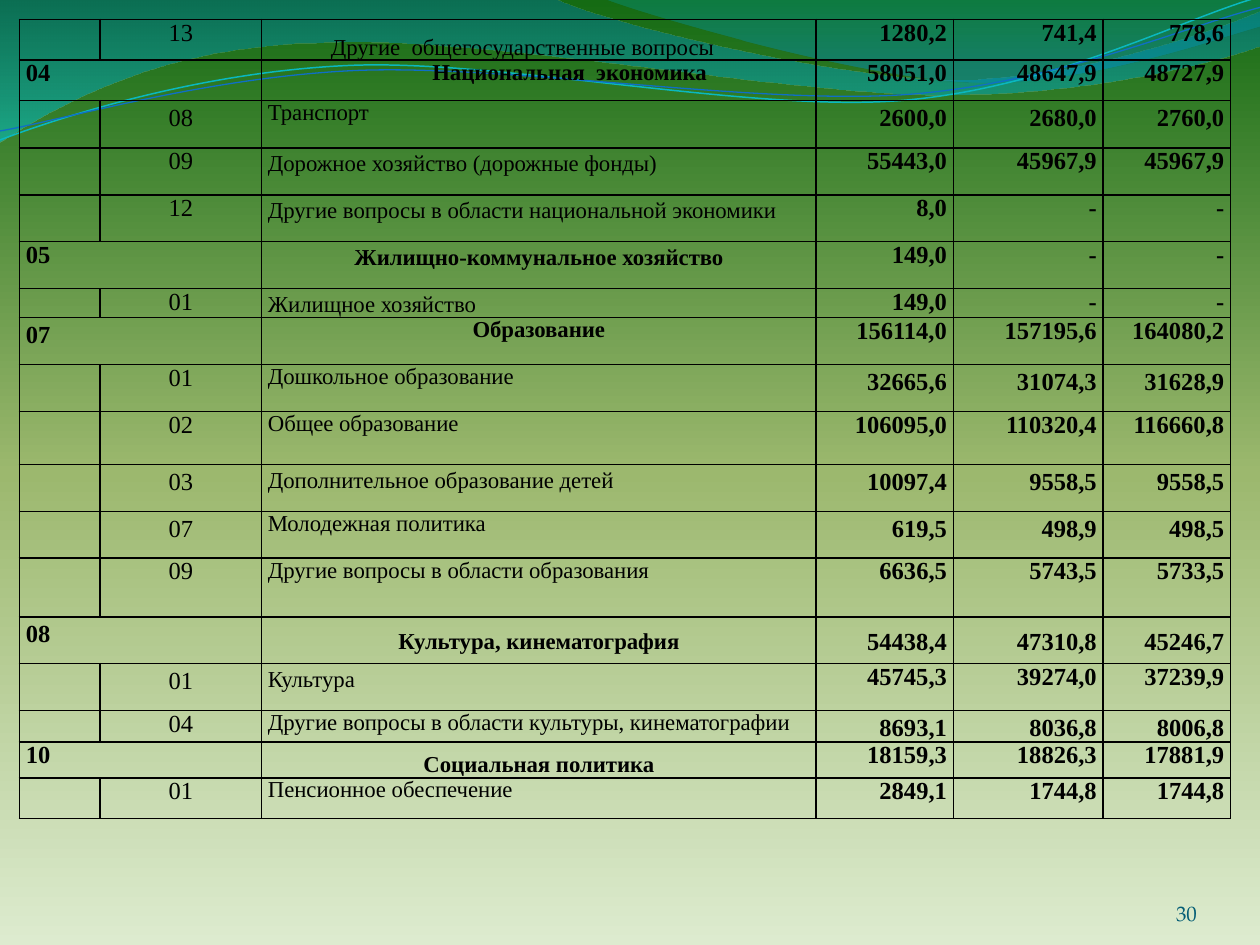
import dataclasses
import math
import lxml.etree
import pptx
import pptx.dml.color
import pptx.enum.text
import pptx.oxml
import pptx.oxml.ns
import pptx.util

Cm = pptx.util.Cm
Pt = pptx.util.Pt
qn = pptx.oxml.ns.qn
ALIGN = pptx.enum.text.PP_ALIGN
ANCHOR = pptx.enum.text.MSO_ANCHOR


@dataclasses.dataclass(frozen=True)
class Theme:
    ink: str = "000000"
    number: str = "045D75"
    backdrop: tuple = ((0, "DDEBCF", 100), (50, "9CB86E", 100), (100, "156B13", 100))
    wide_wave: tuple = ((0, "0074A1", 45), (100, "00C6CF", 55))
    right_wave: tuple = ((0, "00A1A9", 30), (80, "008BBF", 45))
    upper_line: str = "0AB8BF"
    lower_line: str = "0F6FC6"
    body_font: str = "Times New Roman"
    number_font: str = "TeX Gyre Pagella"
    figure_size: int = 14
    name_size: int = 13
    number_size: int = 12


THEME = Theme()

WIDE_WAVE = [
    (0, -0.03), (11.18, -0.03), (12.09, 0.43, 16.87, 1.6, 19.25, 1.6),
    (21.67, 1.6, 24.33, 0.66, 25.4, 0.23), (25.43, 0.91),
    (24.97, 1.12, 22.1, 1.93, 18.95, 1.91), (15.8, 1.91, 9.7, 0.71, 6.53, 0.86),
    (3.28, 0.89, 1.17, 2.11, -0.03, 2.87)]
RIGHT_WAVE = [
    (12.17, -0.03), (12.93, 0.28, 17.32, 1.57, 19.53, 1.65),
    (21.74, 1.75, 24.41, 0.81, 25.4, 0.53), (25.4, 0)]
UPPER_LINE = [
    (0, 2.82), (1.22, 2.36, 4.01, 1.45, 7.04, 1.32),
    (10.03, 1.19, 15.06, 2.26, 18.11, 2.03), (21.16, 1.8, 23.83, 0.38, 25.35, -0.05)]
LOWER_LINE = [
    (0, 2.64), (1.19, 2.44, 4.17, 1.55, 7.19, 1.42),
    (10.24, 1.3, 15.16, 2.11, 18.21, 1.91), (21.23, 1.7, 23.9, 0.53, 25.4, 0.15)]
LINE_CENTER = (12.68, 1.46)
LINE_TILT = -2.7

COLUMN_WIDTHS = [1.63, 3.25, 11.18, 2.77, 3.02, 2.57]
# Height, section, code, name, figures, loosely spaced parts: c code, n name, v figures
BUDGET = [
    (0.82, "", "13", "Другие  общегосударственные вопросы", "1280,2 741,4 778,6", ""),
    (0.82, "04", "", "Национальная  экономика", "58051,0 48647,9 48727,9", ""),
    (0.95, "", "08", "Транспорт", "2600,0 2680,0 2760,0", "cv"),
    (0.95, "", "09", "Дорожное хозяйство (дорожные фонды)", "55443,0 45967,9 45967,9", "n"),
    (0.94, "", "12", "Другие вопросы в области национальной экономики", "8,0 - -", "n"),
    (0.95, "05", "", "Жилищно-коммунальное хозяйство", "149,0 - -", "n"),
    (0.58, "", "01", "Жилищное хозяйство", "149,0 - -", "n"),
    (0.95, "07", "", "Образование", "156114,0 157195,6 164080,2", "c"),
    (0.95, "", "01", "Дошкольное образование", "32665,6 31074,3 31628,9", "v"),
    (1.06, "", "02", "Общее образование", "106095,0 110320,4 116660,8", ""),
    (0.95, "", "03", "Дополнительное образование детей", "10097,4 9558,5 9558,5", "cnv"),
    (0.94, "", "07", "Молодежная политика", "619,5 498,9 498,5", "cv"),
    (1.19, "", "09", "Другие вопросы в области образования", "6636,5 5743,5 5733,5", ""),
    (0.94, "08", "", "Культура, кинематография", "54438,4 47310,8 45246,7", "cv"),
    (0.94, "", "01", "Культура", "45745,3 39274,0 37239,9", "cn"),
    (0.64, "", "04", "Другие вопросы в области культуры, кинематографии",
     "8693,1 8036,8 8006,8", "v"),
    (0.72, "10", "", "Социальная политика", "18159,3 18826,3 17881,9", ""),
    (0.82, "", "01", "Пенсионное обеспечение", "2849,1 1744,8 1744,8", ""),
]


def color(value):
    return pptx.dml.color.RGBColor.from_string(value)


def set_gradient(fill, properties, stops, angle):
    fill.gradient()
    gradient = properties.find(qn("a:gradFill"))
    stop_list = gradient.find(qn("a:gsLst"))
    for old_stop in list(stop_list):
        stop_list.remove(old_stop)
    for position, value, opacity in stops:
        stop = lxml.etree.SubElement(stop_list, qn("a:gs"), pos=str(position * 1000))
        tone = lxml.etree.SubElement(stop, qn("a:srgbClr"), val=value)
        if opacity < 100:
            lxml.etree.SubElement(tone, qn("a:alpha"), val=str(opacity * 1000))
    gradient.find(qn("a:lin")).set("ang", str(angle * 60000))


def turn(point, angle):
    sine, cosine = math.sin(math.radians(angle)), math.cos(math.radians(angle))
    x, y = (value - middle for value, middle in zip(point, LINE_CENTER))
    return (LINE_CENTER[0] + x * cosine - y * sine,
            LINE_CENTER[1] + x * sine + y * cosine)


def add_outline(page, box, segments, close, tilt=0):
    left, top = box
    routes = []
    for segment in segments:
        pairs = [turn(pair, -tilt) for pair in zip(segment[::2], segment[1::2])]
        routes.append([(Cm(left + x), Cm(top + y)) for x, y in pairs])
    builder = page.shapes.build_freeform(*routes[0][-1], scale=1.0)
    builder.add_line_segments([route[-1] for route in routes[1:]], close=close)
    shape = builder.convert_to_shape()
    for route, line in zip(routes[1:], list(shape._element.iter(qn("a:lnTo")))):
        if len(route) == 3:
            curve = lxml.etree.Element(qn("a:cubicBezTo"))
            for x, y in route:
                lxml.etree.SubElement(curve, qn("a:pt"), x=str(x - shape.left),
                                      y=str(y - shape.top))
            line.getparent().replace(line, curve)
    shape.rotation = tilt
    shape.shadow.inherit = False
    return shape


def add_waves(page, box):
    for segments, stops in ((WIDE_WAVE, THEME.wide_wave), (RIGHT_WAVE, THEME.right_wave)):
        wave = add_outline(page, box, segments, True)
        set_gradient(wave.fill, wave._element.spPr, stops, 90)
        wave.line.fill.background()
    for segments, tone, width in ((UPPER_LINE, THEME.upper_line, 0.85),
                                  (LOWER_LINE, THEME.lower_line, 0.75)):
        curve = add_outline(page, box, segments, False, LINE_TILT)
        curve.fill.background()
        curve.line.color.rgb = color(tone)
        curve.line.width = Pt(width)


def format_cell(cell):
    cell.margin_left = cell.margin_right = Cm(0.13)
    cell.margin_top = cell.margin_bottom = 0
    cell.fill.background()
    properties = cell._tc.get_or_add_tcPr()
    for index, side in enumerate(("lnL", "lnR", "lnT", "lnB")):
        border = pptx.oxml.parse_xml(
            f'<a:{side} {pptx.oxml.ns.nsdecls("a")} w="12700"><a:solidFill>'
            f'<a:srgbClr val="{THEME.ink}"/></a:solidFill></a:{side}>')
        properties.insert(index, border)
    end = cell.text_frame.paragraphs[0]._p.get_or_add_endParaRPr()
    end.set("sz", str(THEME.name_size * 100))


def write(frame, text, size, alignment, bold=False, loose=False,
          font=THEME.body_font, tone=THEME.ink):
    frame.text = text
    para = frame.paragraphs[0]
    para.alignment = alignment
    if loose:
        para.line_spacing = 1.15
        para.space_after = Pt(10)
    for span in para.runs:
        span.font.size = Pt(size)
        span.font.bold = bold
        span.font.name = font
        span.font.color.rgb = color(tone)
    return para


def set_indent(para, margin, first_line):
    properties = para._p.get_or_add_pPr()
    properties.set("marL", str(Cm(margin)))
    properties.set("indent", str(Cm(first_line)))


def add_budget_table(page, box):
    table = page.shapes.add_table(len(BUDGET), len(COLUMN_WIDTHS), *map(Cm, box)).table
    table.first_row = table.horz_banding = False
    for column, width in zip(table.columns, COLUMN_WIDTHS):
        column.width = Cm(width)
    names = {}
    for row, (height, section, code, name, figures, loose) in enumerate(BUDGET):
        table.rows[row].height = Cm(height)
        cells = [table.cell(row, column) for column in range(len(COLUMN_WIDTHS))]
        for cell in cells:
            format_cell(cell)
        heading = bool(section)
        if heading:
            cells[0].merge(cells[1])
            write(cells[0].text_frame, section, THEME.figure_size, ALIGN.LEFT,
                  True, "c" in loose)
        else:
            write(cells[1].text_frame, code, THEME.figure_size, ALIGN.CENTER,
                  False, "c" in loose)
        names[name] = cells[2], write(
            cells[2].text_frame, name, THEME.name_size,
            ALIGN.CENTER if heading else ALIGN.JUSTIFY, heading, "n" in loose)
        for cell, figure in zip(cells[3:], figures.split()):
            write(cell.text_frame, figure, THEME.figure_size, ALIGN.RIGHT, True, "v" in loose)
            if section == "08":
                cell.vertical_anchor = ANCHOR.MIDDLE

    cell, para = names["Другие  общегосударственные вопросы"]
    cell.vertical_anchor = ANCHOR.BOTTOM
    para.alignment = ALIGN.LEFT
    set_indent(para, 1.57, -0.3)
    set_indent(names["Национальная  экономика"][1], 0, 1.24)
    names["Социальная политика"][0].vertical_anchor = ANCHOR.BOTTOM
    para = names["Культура, кинематография"][1]
    para.line_spacing = 1.5
    para.space_before = Pt(6)


def add_page_number(page, box):
    frame = page.shapes.add_textbox(*map(Cm, box)).text_frame
    frame.word_wrap = True
    frame.vertical_anchor = ANCHOR.BOTTOM
    frame.margin_left = frame.margin_right = frame.margin_top = frame.margin_bottom = 0
    write(frame, "30", THEME.number_size, ALIGN.RIGHT,
          font=THEME.number_font, tone=THEME.number)


def main():
    deck = pptx.Presentation()
    deck.slide_width, deck.slide_height = Cm(25.4), Cm(19.05)
    page = deck.slides.add_slide(deck.slide_layouts[6])
    fill = page.background.fill
    set_gradient(fill, page._element.cSld.find(qn("p:bg")).find(qn("p:bgPr")),
                 THEME.backdrop, 270)
    add_waves(page, (0, 0))
    add_budget_table(page, (0.39, 0.39, 24.42, 16.2))
    add_page_number(page, (22.02, 17.65, 2.11, 1.02))
    deck.save("out.pptx")


if __name__ == "__main__":
    main()
